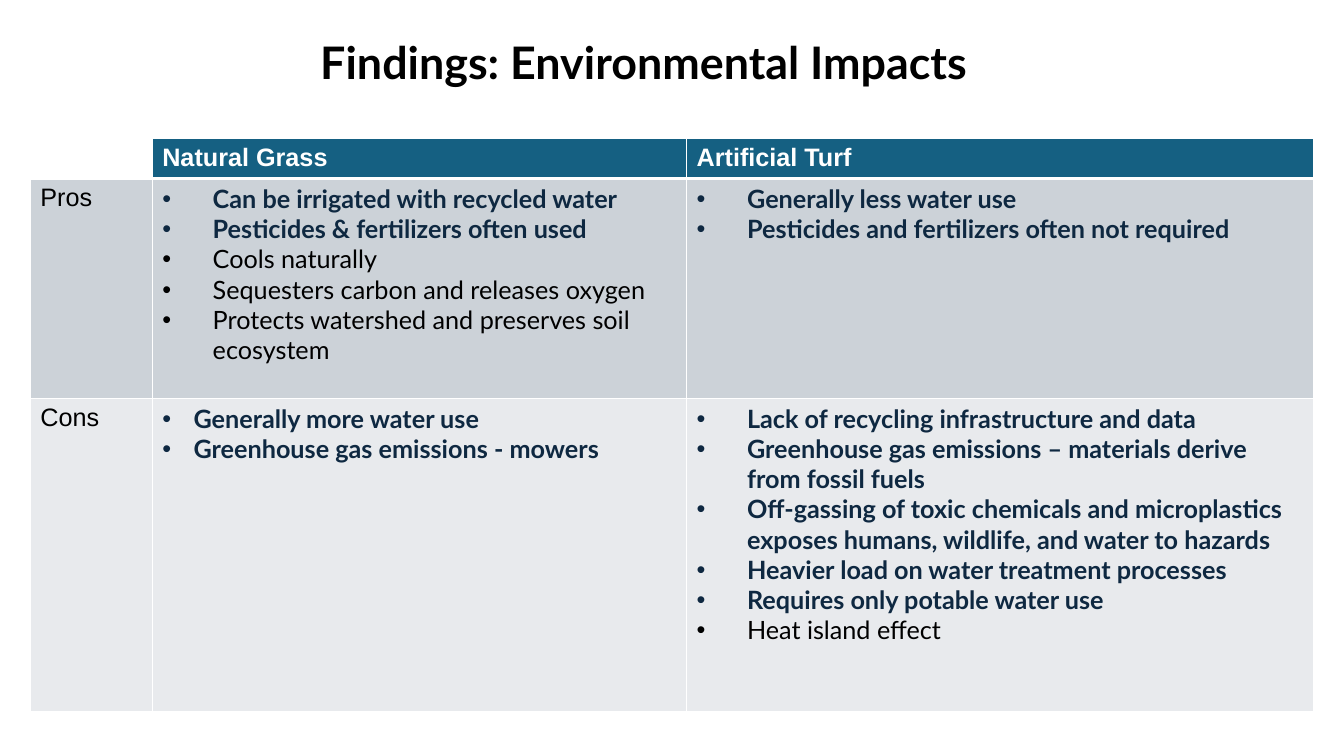
from pptx import Presentation
from pptx.dml.color import RGBColor
from pptx.oxml.ns import qn
from pptx.util import Emu, Pt
from lxml.etree import SubElement

EMU_PER_PX = 9144
WHITE, BLACK, NAVY, TEAL = "FFFFFF", "000000", "0E2841", "156082"
PROS_FILL, CONS_FILL = "CCD2D8", "E8EAED"
COLUMN_WIDTHS = [121, 530, 622]
ROW_HEIGHTS = [40, 218, 311]

# Each bullet is its text and whether it is emphasised.
GRASS_PROS = [
    ("Can be irrigated with recycled water", True),
    ("Pesticides & fertilizers often used", True),
    ("Cools naturally", False),
    ("Sequesters carbon and releases oxygen", False),
    ("Protects watershed and preserves soil ecosystem", False),
]
TURF_PROS = [
    ("Generally less water use", True),
    ("Pesticides and fertilizers often not required", True),
]
GRASS_CONS = [
    ("Generally more water use", True),
    ("Greenhouse gas emissions - mowers", True),
]
TURF_CONS = [
    ("Lack of recycling infrastructure and data", True),
    ("Greenhouse gas emissions – materials derive from fossil fuels", True),
    ("Off-gassing of toxic chemicals and microplastics exposes humans, "
     "wildlife, and water to hazards", True),
    ("Heavier load on water treatment processes", True),
    ("Requires only potable water use", True),
    ("Heat island effect", False),
]


def px(length):
    return Emu(length * EMU_PER_PX)


def color(hex_string):
    return RGBColor.from_string(hex_string)


def add_span(para, text, font, size, hex_string, bold=False):
    span = para.add_run()
    span.text = text
    span.font.name = font
    span.font.size = Pt(size)
    span.font.bold = bold
    span.font.color.rgb = color(hex_string)


def add_title(page, text):
    box = page.shapes.add_textbox(px(297), px(30), px(740), px(63))
    box.text_frame.word_wrap = True
    add_span(box.text_frame.paragraphs[0], text, "Lato", 32, BLACK, True)


def set_borders(cell, top, bottom):
    """Draw white borders; top and bottom are widths in points."""
    properties = cell._tc.get_or_add_tcPr()
    for side, width in (("L", 1), ("R", 1), ("T", top), ("B", bottom)):
        line = SubElement(properties, qn(f"a:ln{side}"), w=str(Pt(width)))
        fill = SubElement(line, qn("a:solidFill"))
        SubElement(fill, qn("a:srgbClr"), val=WHITE)


def fill_cell(cell, hex_string):
    cell.fill.solid()
    cell.fill.fore_color.rgb = color(hex_string)


def write_label(cell, text, hex_string, bold=False):
    add_span(cell.text_frame.paragraphs[0], text, "Arial", 18, hex_string, bold)


def write_bullets(cell, bullets, indent):
    frame = cell.text_frame
    for index, (text, emphasised) in enumerate(bullets):
        para = frame.add_paragraph() if index else frame.paragraphs[0]
        properties = para._p.get_or_add_pPr()
        properties.set("marL", str(px(indent)))
        properties.set("indent", str(-px(indent)))
        SubElement(properties, qn("a:buFont"), typeface="Arial")
        SubElement(properties, qn("a:buChar"), char="•")
        add_span(para, text, "Lato", 18, NAVY if emphasised else BLACK, emphasised)


def add_findings_table(page):
    table = page.shapes.add_table(
        len(ROW_HEIGHTS), len(COLUMN_WIDTHS), px(30), px(137),
        px(sum(COLUMN_WIDTHS)), px(sum(ROW_HEIGHTS))).table
    table.first_row = table.horz_banding = False
    for column, width in zip(table.columns, COLUMN_WIDTHS):
        column.width = px(width)
    for index, (row, height) in enumerate(zip(table.rows, ROW_HEIGHTS)):
        row.height = px(height)
        for cell in row.cells:
            set_borders(cell, 3 if index == 1 else 1, 3 if index == 0 else 1)

    table.cell(0, 0).fill.background()
    for column, heading in enumerate(("Natural Grass", "Artificial Turf"), 1):
        cell = table.cell(0, column)
        fill_cell(cell, TEAL)
        write_label(cell, heading, WHITE, True)

    body = [
        ("Pros", PROS_FILL, (GRASS_PROS, 50), (TURF_PROS, 50)),
        ("Cons", CONS_FILL, (GRASS_CONS, 31), (TURF_CONS, 50)),
    ]
    for row, (label, background, *lists) in enumerate(body, 1):
        for cell in table.rows[row].cells:
            fill_cell(cell, background)
        write_label(table.cell(row, 0), label, BLACK)
        for column, (bullets, indent) in enumerate(lists, 1):
            write_bullets(table.cell(row, column), bullets, indent)


def main():
    deck = Presentation()
    deck.slide_width, deck.slide_height = px(1333), px(750)
    page = deck.slides.add_slide(deck.slide_layouts[6])
    add_title(page, " Findings: Environmental Impacts")
    add_findings_table(page)
    deck.save("out.pptx")


if __name__ == "__main__":
    main()
